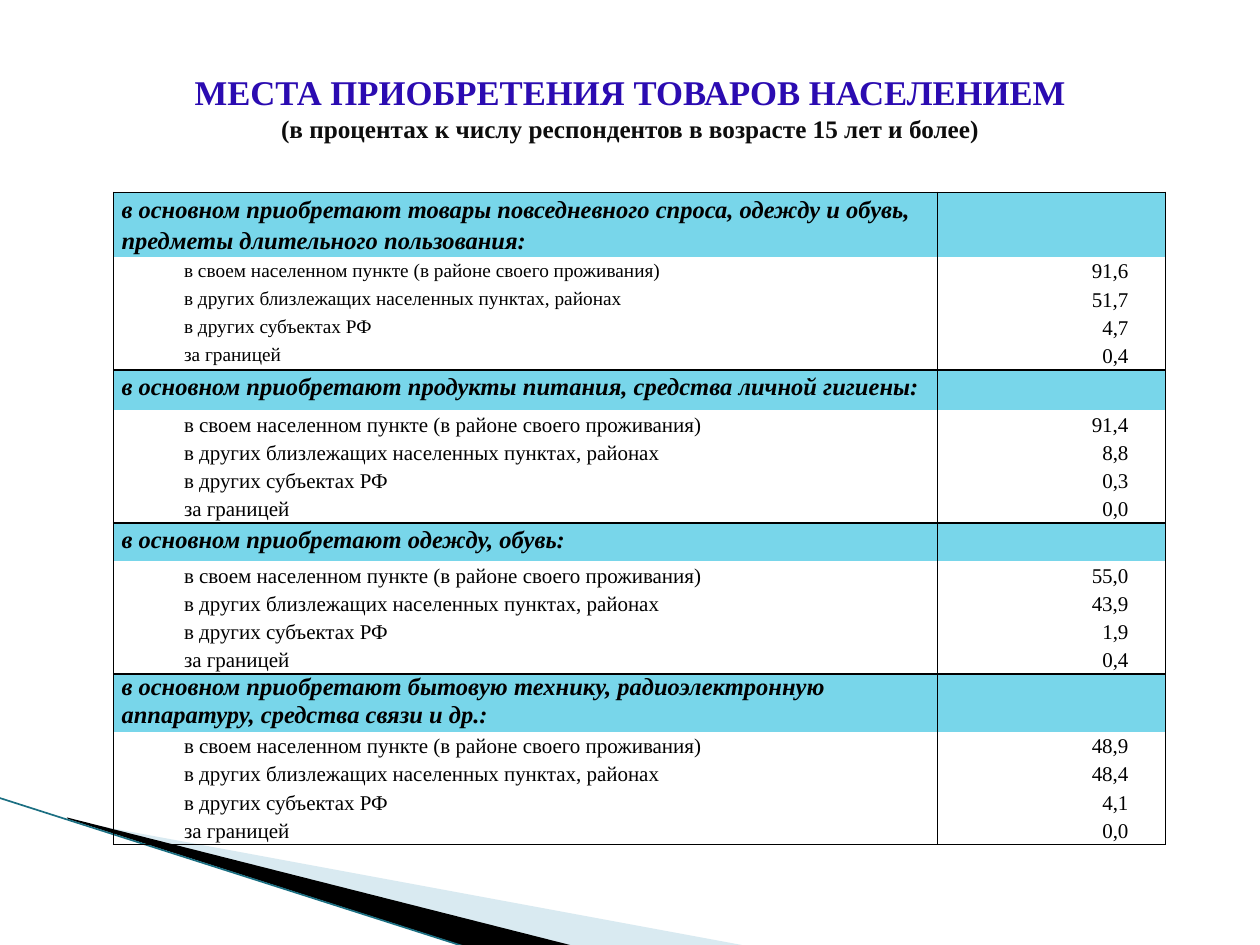
from dataclasses import dataclass

from lxml import etree
from pptx import Presentation
from pptx.dml.color import RGBColor
from pptx.enum.shapes import MSO_CONNECTOR
from pptx.enum.text import MSO_ANCHOR, PP_ALIGN
from pptx.oxml.ns import qn
from pptx.util import Cm, Pt

LEFT, CENTER, RIGHT = PP_ALIGN.LEFT, PP_ALIGN.CENTER, PP_ALIGN.RIGHT
STRAIGHT = MSO_CONNECTOR.STRAIGHT

TITLE = "МЕСТА ПРИОБРЕТЕНИЯ ТОВАРОВ НАСЕЛЕНИЕМ"
SUBTITLE = "(в процентах к числу респондентов в возрасте 15 лет и более)"
PLACES = [
    "в своем населенном пункте (в районе своего проживания)",
    "в других близлежащих населенных пунктах, районах",
    "в других субъектах РФ",
    "за границей",
]


@dataclass
class Theme:
    font: str = "Times New Roman"
    title: str = "2B0BB1"
    subtitle: str = "0D0D0D"
    ink: str = "000000"
    header: str = "78D6EA"
    pale: str = "A0CBDC"
    edge: str = "1B6F82"
    title_size: float = 19.8
    subtitle_size: float = 14.4
    header_size: float = 14
    value_size: float = 12
    small_size: float = 11
    loose: float = 1.27  # line pitch as a multiple of the type size
    tight: float = 1.11


THEME = Theme()

# heading, heading row height in cm, heading line pitch, place size, values
GROUPS = [
    ("в основном приобретают товары повседневного спроса, одежду и обувь, "
     "предметы длительного пользования:",
     1.3, THEME.loose, THEME.small_size, ["91,6", "51,7", "4,7", "0,4"]),
    ("в основном приобретают продукты питания, средства личной гигиены:",
     0.81, THEME.loose, THEME.value_size, ["91,4", "8,8", "0,3", "0,0"]),
    ("в основном приобретают одежду, обувь:",
     0.77, THEME.loose, THEME.value_size, ["55,0", "43,9", "1,9", "0,4"]),
    ("в основном приобретают бытовую технику, радиоэлектронную аппаратуру, "
     "средства связи и др.:",
     1.16, THEME.tight, THEME.value_size, ["48,9", "48,4", "4,1", "0,0"]),
]
COLUMN_WIDTHS = [16.61, 4.6]
PLACE_HEIGHT = 0.57
PLACE_INDENT = 1.26
CELL_MARGIN = 0.16
VALUE_MARGIN = 0.75

# frame (left, top, width, height) and outline of each wedge, in cm
PALE_FRAME = (1.98, 13.89, 10.57, 4.01)
PALE_WEDGE = [(1.4, 16.54), (15.11, 19.08), (11.58, 19.08), (1.4, 16.51)]
DARK_FRAME = (-0.15, 16.08, 10.57, 2.34)
DARK_WEDGE = [(1.35, 16.48), (11.61, 19.08), (9.45, 19.1), (1.37, 16.51)]
EDGE = [(-0.03, 16.08), (9.42, 19.1)]


def rgb(value):
    return RGBColor.from_string(value)


def write(paragraph, text, size, color=THEME.ink, bold=False, italic=False,
          align=LEFT, pitch=None, indent=0):
    paragraph.alignment = align
    if pitch:
        paragraph.line_spacing = Pt(round(size * pitch, 1))
    if indent:
        properties = paragraph._p.get_or_add_pPr()
        properties.set("marL", str(Cm(indent)))
        properties.set("indent", "0")
    run = paragraph.add_run()
    run.text = text
    font = run.font
    font.name, font.size = THEME.font, Pt(size)
    font.bold, font.italic = bold, italic
    font.color.rgb = rgb(color)


def add_wedge(shapes, frame, points, color, opacity=100):
    """Draw a wedge whose outline may reach beyond its frame."""
    start, *rest = [(Cm(x), Cm(y)) for x, y in points]
    builder = shapes.build_freeform(*start)
    builder.add_line_segments(rest, close=True)
    wedge = builder.convert_to_shape()
    left, top, width, height = [Cm(value) for value in frame]
    shift_x, shift_y = wedge.left - left, wedge.top - top
    wedge.left, wedge.top, wedge.width, wedge.height = left, top, width, height
    outline = next(wedge._element.iter(qn("a:path")))
    outline.set("w", str(width))
    outline.set("h", str(height))
    for point in outline.iter(qn("a:pt")):
        point.set("x", str(int(point.get("x")) + shift_x))
        point.set("y", str(int(point.get("y")) + shift_y))
    wedge.shadow.inherit = False
    wedge.line.fill.background()
    wedge.fill.solid()
    wedge.fill.fore_color.rgb = rgb(color)
    if opacity < 100:
        tint = wedge._element.spPr.find(qn("a:solidFill"))[0]
        etree.SubElement(tint, qn("a:alpha"), val=str(opacity * 1000))


def add_edge(shapes):
    ends = [Cm(value) for point in EDGE for value in point]
    edge = shapes.add_connector(STRAIGHT, *ends)
    edge.line.color.rgb = rgb(THEME.edge)
    edge.line.width = Pt(0.95)
    etree.SubElement(edge._element.spPr, qn("a:effectLst"))


def format_cell(cell, fill=None, sides="LR", right=CELL_MARGIN):
    """Draw the named sides (L, R, T, B) in ink and leave the others open."""
    cell.margin_left, cell.margin_right = Cm(CELL_MARGIN), Cm(right)
    cell.margin_top = cell.margin_bottom = 0
    properties = cell._tc.get_or_add_tcPr()
    for side in "LRTB":
        border = etree.SubElement(properties, qn("a:ln" + side),
                                  w=str(Pt(1)))
        if side in sides:
            paint = etree.SubElement(border, qn("a:solidFill"))
            etree.SubElement(paint, qn("a:srgbClr"), val=THEME.ink)
        else:
            etree.SubElement(border, qn("a:noFill"))
    if fill:
        cell.fill.solid()
        cell.fill.fore_color.rgb = rgb(fill)
    else:
        cell.fill.background()


def add_places_table(shapes):
    heights = []
    for _, heading_height, *_ in GROUPS:
        heights += [heading_height] + [PLACE_HEIGHT] * len(PLACES)
    table = shapes.add_table(len(heights), len(COLUMN_WIDTHS),
                             Cm(2.29), Cm(3.88), Cm(sum(COLUMN_WIDTHS)),
                             Cm(sum(heights))).table
    table.first_row = table.horz_banding = False
    for column, width in zip(table.columns, COLUMN_WIDTHS):
        column.width = Cm(width)
    for row, height in zip(table.rows, heights):
        row.height = Cm(height)

    rows = iter(table.rows)
    for heading, _, pitch, place_size, values in GROUPS:
        heading_cells = next(rows).cells
        for cell in heading_cells:
            format_cell(cell, THEME.header, "LRT")
        write(heading_cells[0].text_frame.paragraphs[0], heading,
              THEME.header_size, bold=True, italic=True, pitch=pitch)
        for place, value in zip(PLACES, values):
            place_cell, value_cell = next(rows).cells
            sides = "LRB" if place == PLACES[-1] else "LR"
            format_cell(place_cell, sides=sides)
            format_cell(value_cell, sides=sides, right=VALUE_MARGIN)
            write(place_cell.text_frame.paragraphs[0], place, place_size,
                  pitch=THEME.loose, indent=PLACE_INDENT)
            write(value_cell.text_frame.paragraphs[0], value,
                  THEME.value_size, align=RIGHT, pitch=THEME.loose)


def add_title(shapes):
    frame = shapes.add_textbox(Cm(1.27), Cm(1.36), Cm(22.86),
                               Cm(1.6)).text_frame
    frame.word_wrap = True
    frame.vertical_anchor = MSO_ANCHOR.MIDDLE
    frame.margin_top = frame.margin_bottom = 0
    write(frame.paragraphs[0], TITLE, THEME.title_size, THEME.title,
          bold=True, align=CENTER)
    write(frame.add_paragraph(), SUBTITLE, THEME.subtitle_size,
          THEME.subtitle, bold=True, align=CENTER)


def main():
    presentation = Presentation()
    presentation.slide_width, presentation.slide_height = Cm(25.4), Cm(19.05)
    slide = presentation.slides.add_slide(presentation.slide_layouts[6])
    add_wedge(slide.shapes, PALE_FRAME, PALE_WEDGE, THEME.pale, opacity=40)
    add_wedge(slide.shapes, DARK_FRAME, DARK_WEDGE, THEME.ink)
    add_edge(slide.shapes)
    add_title(slide.shapes)
    add_places_table(slide.shapes)
    presentation.save("out.pptx")


if __name__ == "__main__":
    main()
